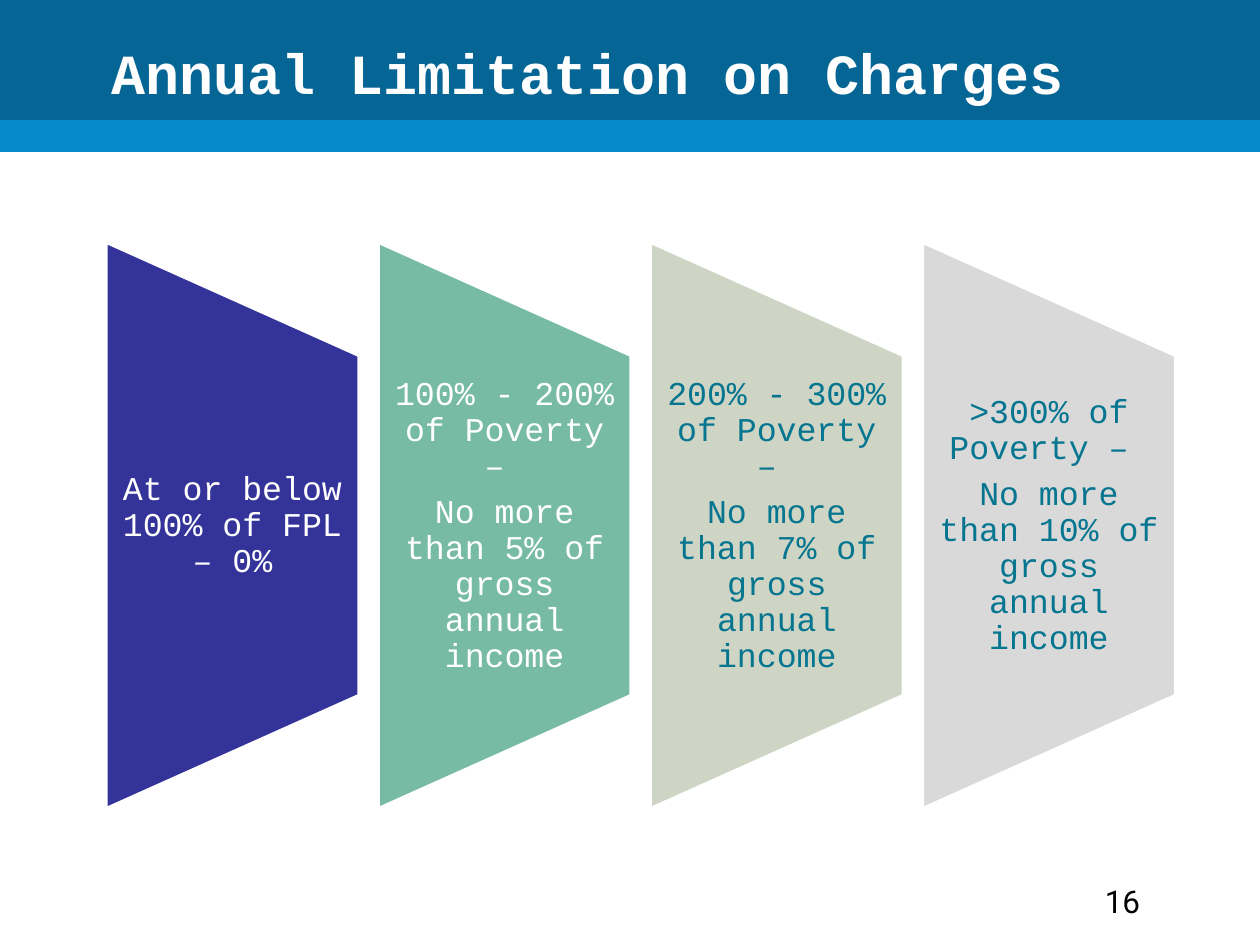
import pptx
import pptx.util
import pptx.dml.color
import pptx.enum.shapes
import pptx.enum.text
import lxml.etree

Inches, Pt = pptx.util.Inches, pptx.util.Pt
SHAPES = pptx.enum.shapes.MSO_SHAPE
ALIGN = pptx.enum.text.PP_ALIGN
ANCHOR = pptx.enum.text.MSO_ANCHOR


def color(hex_string):
    return pptx.dml.color.RGBColor.from_string(hex_string)


def add_span(para, text, size, font, hex_string, bold=False):
    span = para.add_run()
    span.text = text
    span.font.size = Pt(size)
    span.font.name = font
    span.font.bold = bold
    span.font.color.rgb = color(hex_string)


deck = pptx.Presentation()
deck.slide_width, deck.slide_height = Inches(10), Inches(7.5)
page = deck.slides.add_slide(deck.slide_layouts[5])

# Header band and the stripe below it
band = page.shapes.add_shape(SHAPES.RECTANGLE, 0, 0, deck.slide_width, Inches(1))
band.shadow.inherit = False
band.fill.solid()
band.fill.fore_color.rgb = color("056594")
band.line.fill.background()

stripe = page.shapes.add_connector(
    pptx.enum.shapes.MSO_CONNECTOR.STRAIGHT, 0, Inches(1.08), deck.slide_width, Inches(1.08))
stripe.line.color.rgb = color("078ACB")
stripe.line.width = Pt(18)
lxml.etree.SubElement(stripe._element.spPr, pptx.oxml.ns.qn("a:effectLst"))

# Title, brought in front of the band
title = page.shapes.title
title.left, title.top = Inches(0.75), Inches(0.17)
title.width, title.height = Inches(7.83), Inches(1.17)
page.shapes._spTree.append(title._element)
title.text_frame.vertical_anchor = ANCHOR.TOP
title.text_frame.margin_top = Inches(0.13)
para = title.text_frame.paragraphs[0]
para.alignment = ALIGN.CENTER
add_span(para, "Annual Limitation on Charges", 32.4, "Courier New", "FFFFFF", bold=True)

# Income levels: one turned trapezoid with a text box per column
first_left, step, middle = 0.84, 2.16, 4.17
column_width, panel_length, text_height = 2.01, 4.5, 2.7
levels = [
    ("333399", "FFFFFF", ["At or below 100% of FPL – 0%"]),
    ("77BBA4", "FFFFFF", ["100% - 200% of Poverty – ", "No more than 5% of gross annual income"]),
    ("CFD5C4", "057590", ["200% - 300% of Poverty – ", "No more than 7% of gross annual income"]),
    ("D9D9D9", "057590", [">300% of Poverty – ", "No more than 10% of gross annual income"]),
]
for column, (fill, ink, lines) in enumerate(levels):
    left = first_left + column * step
    panel = page.shapes.add_shape(
        SHAPES.FLOWCHART_MANUAL_OPERATION,
        Inches(left + (column_width - panel_length) / 2), Inches(middle - column_width / 2),
        Inches(panel_length), Inches(column_width))
    panel.rotation = 270
    panel.shadow.inherit = False
    panel.fill.solid()
    panel.fill.fore_color.rgb = color(fill)
    panel.line.color.rgb = color("FFFFFF")
    panel.line.width = Pt(2)

    box = page.shapes.add_textbox(
        Inches(left), Inches(middle - text_height / 2), Inches(column_width), Inches(text_height))
    frame = box.text_frame
    frame.word_wrap = True
    frame.vertical_anchor = ANCHOR.MIDDLE
    frame.margin_left = frame.margin_right = Inches(0.13)
    frame.margin_top = frame.margin_bottom = 0
    for number, line in enumerate(lines):
        para = frame.add_paragraph() if number else frame.paragraphs[0]
        para.alignment = ALIGN.CENTER
        para.line_spacing = 0.9
        para.space_after = Pt(6)
        add_span(para, line, 19, "Courier New", ink)

# Page number
box = page.shapes.add_textbox(Inches(8.67), Inches(6.95), Inches(0.83), Inches(0.4))
box.text_frame.word_wrap = True
add_span(box.text_frame.paragraphs[0], "16", 18, "Roboto", "000000")

deck.save("out.pptx")
